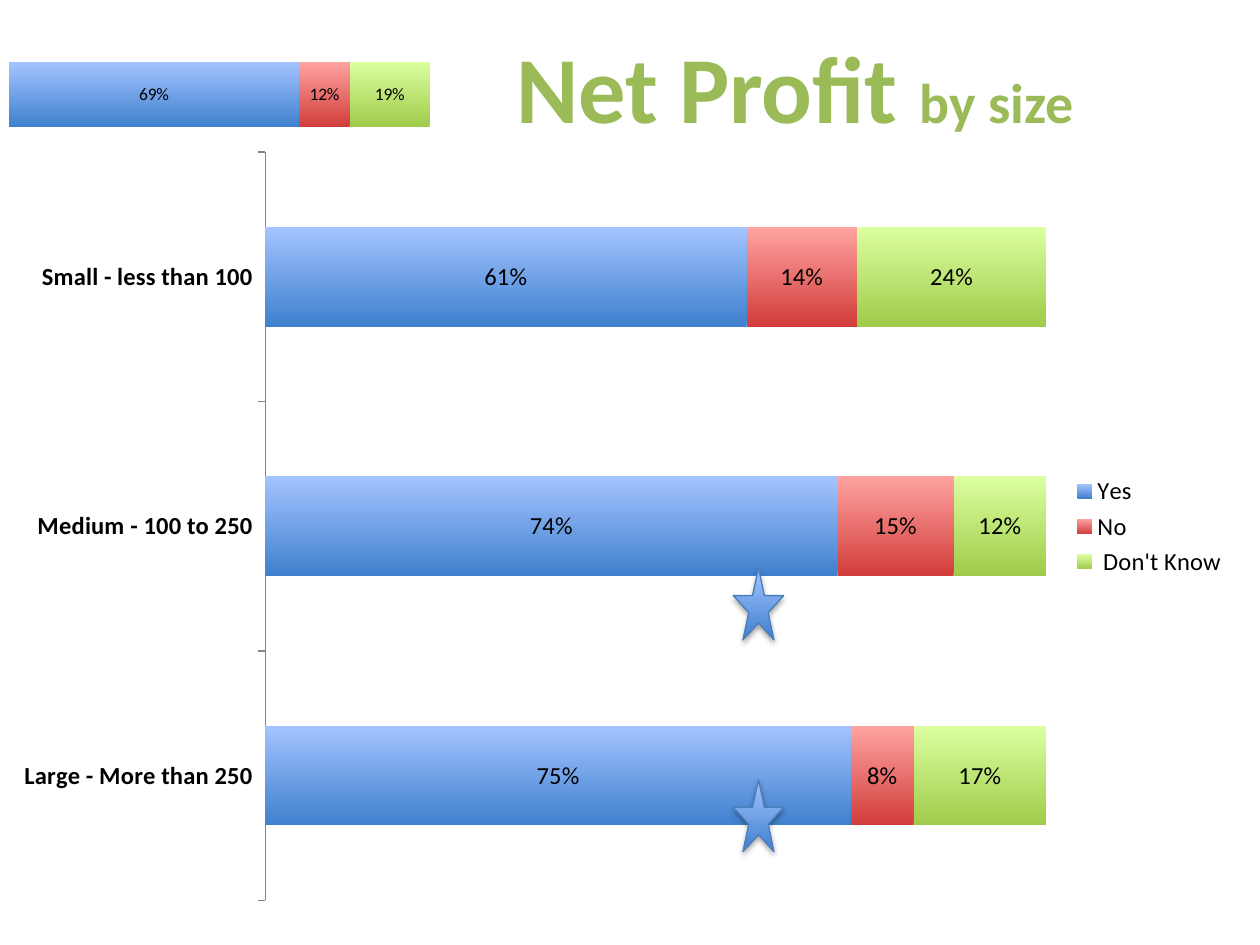
"""Build the slide on net profit by company size."""
import pptx
import pptx.chart.data
import pptx.dml.color
import pptx.enum.chart
import pptx.enum.shapes
import pptx.enum.text
import pptx.oxml
import pptx.oxml.ns
import pptx.util
from pptx.util import Inches

RGBColor = pptx.dml.color.RGBColor
BLACK = RGBColor(0x00, 0x00, 0x00)
GREEN = RGBColor(0x9B, 0xBB, 0x59)
AXIS_GREY = RGBColor(0x86, 0x86, 0x86)
STAR_LINE = RGBColor(0x4B, 0x7E, 0xBC)
BLUES = (RGBColor(0x3F, 0x80, 0xCE), RGBColor(0xA4, 0xC4, 0xFF))
REDS = (RGBColor(0xD1, 0x3D, 0x3B), RGBColor(0xFF, 0xA3, 0xA0))
GREENS = (RGBColor(0xA0, 0xCB, 0x4A), RGBColor(0xDB, 0xFF, 0xA0))


def shade(fill, colors):
    fill.gradient()
    fill.gradient_angle = 90
    for stop, color in zip(fill.gradient_stops, colors):
        stop.color.rgb = color


def add_bars(s, box, cats, series, label_size, layout):
    data = pptx.chart.data.CategoryChartData(number_format="0%")
    data.categories = cats
    for name, values in series:
        data.add_series(name, values)
    kind = pptx.enum.chart.XL_CHART_TYPE.BAR_STACKED_100
    chart = s.shapes.add_chart(kind, *[Inches(v) for v in box], data).chart
    chart.has_title = False
    chart.has_legend = False
    chart.font.name = "Calibri"
    chart.font.size = pptx.util.Pt(10)
    chart.font.color.rgb = BLACK
    chart.value_axis.visible = False
    chart.value_axis.has_major_gridlines = False
    plot = chart.plots[0]
    plot.gap_width = 150
    plot.overlap = 100
    plot.vary_by_categories = False
    for ser, colors in zip(plot.series, (BLUES, REDS, GREENS)):
        shade(ser.format.fill, colors)
        ser.invert_if_negative = False
        labels = ser.data_labels
        labels.show_value = True
        labels.number_format = "0%"
        labels.number_format_is_linked = False
        labels.font.size = pptx.util.Pt(label_size)
        labels.font.color.rgb = BLACK
    area = chart.element.find(".//" + pptx.oxml.ns.qn("c:plotArea"))
    old = area.find(pptx.oxml.ns.qn("c:layout"))
    if old is not None:
        area.remove(old)
    sizes = "".join(f'<c:{k} val="{v}"/>' for k, v in zip("xywh", layout))
    area.insert(0, pptx.oxml.parse_xml(
        f'<c:layout {pptx.oxml.ns.nsdecls("c")}><c:manualLayout>'
        '<c:layoutTarget val="inner"/><c:xMode val="edge"/><c:yMode val="edge"/>'
        f'{sizes}</c:manualLayout></c:layout>'))
    return chart


prs = pptx.Presentation()
prs.slide_width = Inches(10)
prs.slide_height = Inches(7.5)
s = prs.slides.add_slide(prs.slide_layouts[6])

tf = s.shapes.add_textbox(Inches(3.96), Inches(0.18), Inches(4.7), Inches(1.01)).text_frame
tf.word_wrap = False
tf.auto_size = pptx.enum.text.MSO_AUTO_SIZE.SHAPE_TO_FIT_TEXT
p = tf.paragraphs[0]
p.alignment = pptx.enum.text.PP_ALIGN.CENTER
for text, size in (("Net Profit ", 54), ("by size", 32)):
    r = p.add_run()
    r.text = text
    r.font.name = "Calibri"
    r.font.size = pptx.util.Pt(size)
    r.font.bold = True
    r.font.color.rgb = GREEN
    r.font._element.insert(0, pptx.oxml.parse_xml(
        f'<a:ln {pptx.oxml.ns.nsdecls("a")} w="19050"><a:solidFill>'
        '<a:srgbClr val="FEFEFE"/></a:solidFill></a:ln>'))

chart = add_bars(
    s, (0, 1.09, 9.84, 6.18),
    ["Large - More than 250", "Medium - 100 to 250", "Small - less than 100"],
    [("Yes", (0.75, 0.74, 0.61)), ("No", (0.08, 0.15, 0.14)),
     (" Don't Know", (0.17, 0.12, 0.24))],
    14, (0.214, 0.019, 0.63, 0.961))
axis = chart.category_axis
axis.major_tick_mark = pptx.enum.chart.XL_TICK_MARK.OUTSIDE
axis.tick_labels.font.size = pptx.util.Pt(14)
axis.tick_labels.font.bold = True
axis.format.line.color.rgb = AXIS_GREY
chart.has_legend = True
chart.legend.position = pptx.enum.chart.XL_LEGEND_POSITION.RIGHT
chart.legend.include_in_layout = False
chart.legend.font.size = pptx.util.Pt(14)

total = add_bars(
    s, (0, 0.07, 3.48, 1.39), ["1"],
    [("Series 1", (0.69,)), ("Series 2", (0.12,)), ("Series 3", (0.19,))],
    10, (0.02, 0.02, 0.96, 0.94))
total.category_axis.visible = False

for top in (4.51, 6.19):
    sp = s.shapes.add_shape(pptx.enum.shapes.MSO_SHAPE.STAR_5_POINT,
                            Inches(5.82), Inches(top), Inches(0.4), Inches(0.57))
    shade(sp.fill, BLUES)
    sp.line.color.rgb = STAR_LINE
    sp.line.width = pptx.util.Pt(0.75)
    sp.shadow.inherit = False
    effects = sp._element.spPr.find(pptx.oxml.ns.qn("a:effectLst"))
    effects.append(pptx.oxml.parse_xml(
        f'<a:outerShdw {pptx.oxml.ns.nsdecls("a")} blurRad="40000" dist="23000" '
        'dir="5400000" rotWithShape="0"><a:srgbClr val="000000">'
        '<a:alpha val="35000"/></a:srgbClr></a:outerShdw>'))

prs.save("out.pptx")
